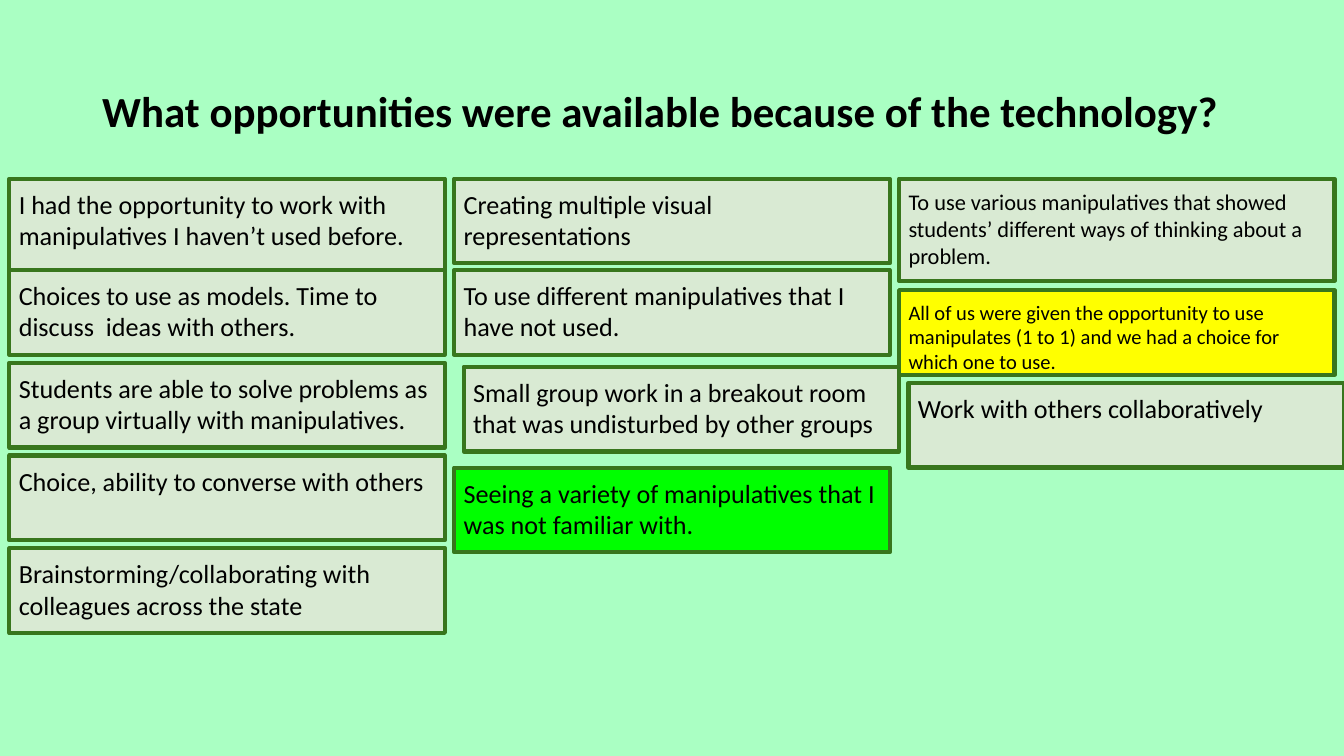
from pptx import Presentation
from pptx.dml.color import RGBColor
from pptx.enum.shapes import MSO_SHAPE
from pptx.enum.text import MSO_ANCHOR, PP_ALIGN
from pptx.util import Inches, Pt

BLACK = RGBColor(0x00, 0x00, 0x00)
MINT = RGBColor(0xAA, 0xFF, 0xC3)
PALE = RGBColor(0xD9, 0xEA, 0xD3)
GREEN = RGBColor(0x38, 0x76, 0x1D)
LIME = RGBColor(0x00, 0xFF, 0x00)
YELLOW = RGBColor(0xFF, 0xFF, 0x00)


def write(shape, text, size, anchor, inset, bold=False):
    frame = shape.text_frame
    frame.word_wrap = True
    frame.vertical_anchor = anchor
    frame.margin_left = frame.margin_right = Inches(0.07)
    frame.margin_top = frame.margin_bottom = Inches(inset)
    para = frame.paragraphs[0]
    para.alignment = PP_ALIGN.LEFT
    run = para.add_run()
    run.text = text
    run.font.name = "Calibri"
    run.font.size = Pt(size)
    run.font.bold = bold
    run.font.color.rgb = BLACK
    return para


deck = Presentation()
deck.slide_width = Inches(10)
deck.slide_height = Inches(10 * 9 / 16)
slide = deck.slides.add_slide(deck.slide_layouts[6])
slide.background.fill.solid()
slide.background.fill.fore_color.rgb = MINT

title = slide.shapes.add_textbox(Inches(0.69), Inches(0.3), Inches(8.62), Inches(1.09))
para = write(title, "What opportunities were available because of the technology?",
             23, MSO_ANCHOR.MIDDLE, 0.04, True)
para.line_spacing = 0.9

WIDE, TALL, GAP = 3.24, 0.63, 0.07
TOP = 1.33
ROWS = [2.01 + 0.69 * i for i in range(4)]
LEFT, MID, RIGHT = [GAP + i * (WIDE + GAP) for i in range(3)]

notes = [
    (MID, TOP, TALL, PALE, 14, "Creating multiple visual representations"),
    (LEFT, TOP, 0.83, PALE, 14, "I had the opportunity to work with manipulatives I haven’t used before."),
    (RIGHT, TOP, 0.76, PALE, 12, "To use various manipulatives that showed students’ different ways of thinking about a problem."),
    (MID, ROWS[0], TALL, PALE, 14, "To use different manipulatives that I have not used."),
    (LEFT, ROWS[0], TALL, PALE, 14, "Choices to use as models. Time to discuss  ideas with others."),
    (MID + GAP, 2.73, TALL, PALE, 14, "Small group work in a breakout room that was undisturbed by other groups"),
    (LEFT, ROWS[1], TALL, PALE, 14, "Students are able to solve problems as a group virtually with manipulatives."),
    (LEFT, ROWS[2], TALL, PALE, 14, "Choice, ability to converse with others"),
    (RIGHT, 2.16, TALL, YELLOW, 11, "All of us were given the opportunity to use manipulates (1 to 1) and we had a choice for which one to use."),
    (LEFT, ROWS[3], TALL, PALE, 14, "Brainstorming/collaborating with colleagues across the state"),
    (MID, 3.48, TALL, LIME, 14, "Seeing a variety of manipulatives that I was not familiar with."),
    (RIGHT + GAP, 2.85, TALL, PALE, 14, "Work with others collaboratively"),
]

for x, y, high, tint, size, text in notes:
    note = slide.shapes.add_shape(MSO_SHAPE.RECTANGLE, Inches(x), Inches(y), Inches(WIDE), Inches(high))
    note.shadow.inherit = False
    note.fill.solid()
    note.fill.fore_color.rgb = tint
    note.line.color.rgb = GREEN
    note.line.width = Pt(2.25)
    write(note, text, size, MSO_ANCHOR.TOP, 0.07)

deck.save("out.pptx")
